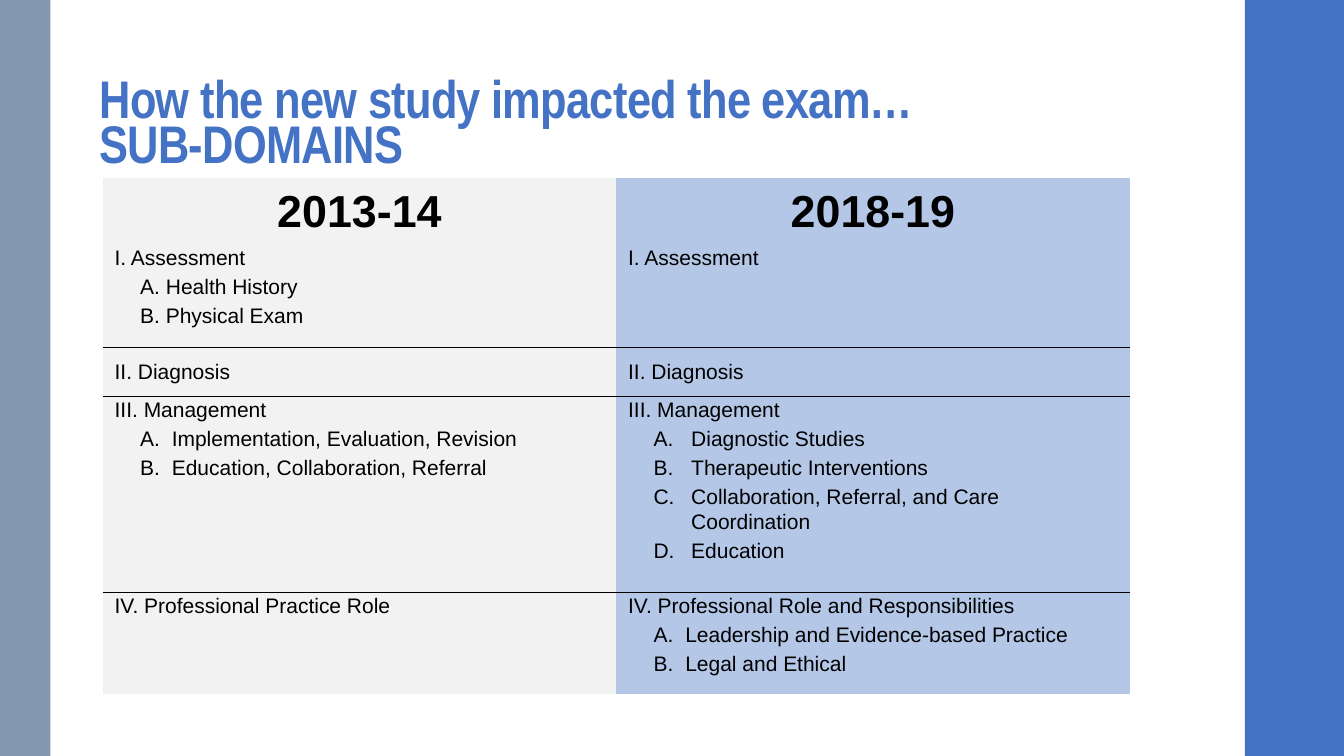
from lxml.etree import SubElement
from pptx import Presentation
from pptx.dml.color import RGBColor
from pptx.enum.shapes import MSO_SHAPE as Preset
from pptx.enum.text import MSO_ANCHOR as Anchor, PP_ALIGN as Align
from pptx.oxml import parse_xml
from pptx.oxml.ns import nsdecls, qn
from pptx.util import Cm, Pt

BLUE = RGBColor(0x44, 0x72, 0xC4)
SLATE = RGBColor(0x84, 0x97, 0xB0)
BLACK = RGBColor(0, 0, 0)
COLUMN_FILLS = [RGBColor(0xF2, 0xF2, 0xF2), RGBColor(0xB4, 0xC7, 0xE7)]
NO_STYLE = "{2D5ABB26-0587-4C30-8999-92F81FD0307C}"

SLIDE_WIDTH, SLIDE_HEIGHT = Cm(33.87), Cm(19.05)
YEARS = ["2013-14", "2018-19"]
ROW_HEIGHTS = [Cm(1.68), Cm(2.59), Cm(1.24), Cm(4.95), Cm(2.54)]
RULE_WIDTHS = {1: 1, 2: 1.5, 3: 1}  # row above the rule: points

# Each cell: domain, sub-domains, distance from letter to wording
DOMAINS = [
    [("I. Assessment", ["Health History", "Physical Exam"], Cm(0.65)),
     ("I. Assessment", [], 0)],
    [("II. Diagnosis", [], 0),
     ("II. Diagnosis", [], 0)],
    [("III. Management",
      ["Implementation, Evaluation, Revision",
       "Education, Collaboration, Referral"], Cm(0.8)),
     ("III. Management",
      ["Diagnostic Studies", "Therapeutic Interventions",
       "Collaboration, Referral, and Care\vCoordination", "Education"],
      Cm(0.95))],
    [("IV. Professional Practice Role", [], 0),
     ("IV. Professional Role and Responsibilities",
      ["Leadership and Evidence-based Practice", "Legal and Ethical"],
      Cm(0.8))],
]


def style_font(paragraph, name, size, color, bold=False):
    for run in paragraph.runs:
        font = run.font
        font.name, font.size, font.bold = name, Pt(size), bold
        font.color.rgb = color


def set_margins(target, left, top, right, bottom):
    target.margin_left, target.margin_top = left, top
    target.margin_right, target.margin_bottom = right, bottom


def add_side_band(slide, left, top, width, height, color):
    band = slide.shapes.add_shape(Preset.RECTANGLE, left, top, width, height)
    band.shadow.inherit = False
    band.fill.solid()
    band.fill.fore_color.rgb = color
    band.line.fill.background()


def add_title(slide, left, top, width, height):
    text_frame = slide.shapes.add_textbox(left, top, width, height).text_frame
    text_frame.word_wrap = True
    text_frame.vertical_anchor = Anchor.BOTTOM
    set_margins(text_frame, Cm(0.25), Cm(0.08), Cm(0.25), Cm(0.13))
    text_frame.text = "How the new study impacted the exam…\vSUB-DOMAINS"
    paragraph = text_frame.paragraphs[0]
    paragraph.line_spacing = 0.7
    style_font(paragraph, "Arial Narrow", 37.8, BLUE, bold=True)
    for run in paragraph.runs:
        run.font._element.set("spc", "-50")


def add_rule(cell, side, width):
    """Draw one cell border; borders come before the fill in the cell XML."""
    cell._tc.get_or_add_tcPr().insert(0, parse_xml(
        f'<a:{side} {nsdecls("a")} w="{Pt(width)}"><a:solidFill>'
        f'<a:srgbClr val="{BLACK}"/></a:solidFill></a:{side}>'))


def letter_paragraph(paragraph, gap):
    """Number a paragraph A., B., C. with a hanging indent."""
    properties = paragraph._p.get_or_add_pPr()
    properties.set("marL", str(Cm(0.64) + gap))
    properties.set("indent", str(-gap))
    SubElement(properties, qn("a:buFont"), typeface="+mj-lt")
    SubElement(properties, qn("a:buAutoNum"), type="alphaUcPeriod")


def fill_year_cell(cell, year):
    set_margins(cell, Cm(0.03), Cm(0.03), Cm(0.03), 0)
    cell.vertical_anchor = Anchor.MIDDLE
    cell.text_frame.text = year
    paragraph = cell.text_frame.paragraphs[0]
    paragraph.alignment = Align.CENTER
    style_font(paragraph, "Arial", 32, BLACK, bold=True)


def fill_domain_cell(cell, domain, subdomains, gap):
    set_margins(cell, Cm(0.3), 0, Cm(0.3), 0)
    cell.text_frame.text = "\n".join([domain, *subdomains])
    for index, paragraph in enumerate(cell.text_frame.paragraphs):
        paragraph.line_spacing = 1.07
        paragraph.space_before, paragraph.space_after = Pt(2), Pt(1)
        style_font(paragraph, "Arial", 15, BLACK)
        if index:
            letter_paragraph(paragraph, gap)


def add_domain_table(slide, left, top, width):
    frame = slide.shapes.add_table(len(ROW_HEIGHTS), len(YEARS), left, top,
                                   width, sum(ROW_HEIGHTS))
    table = frame.table
    table.first_row = table.horz_banding = False
    table._tbl.tblPr.find(qn("a:tableStyleId")).text = NO_STYLE
    for row, height in zip(table.rows, ROW_HEIGHTS):
        row.height = height

    for column, year in enumerate(YEARS):
        fill_year_cell(table.cell(0, column), year)
        for row, domains in enumerate(DOMAINS, start=1):
            fill_domain_cell(table.cell(row, column), *domains[column])
        table.cell(2, column).vertical_anchor = Anchor.MIDDLE

        # Column colour, then the rules between domains
        for row in range(len(ROW_HEIGHTS)):
            cell = table.cell(row, column)
            cell.fill.solid()
            cell.fill.fore_color.rgb = COLUMN_FILLS[column]
            if row in RULE_WIDTHS:
                add_rule(cell, "lnB", RULE_WIDTHS[row])
            if row - 1 in RULE_WIDTHS:
                add_rule(cell, "lnT", RULE_WIDTHS[row - 1])


def main():
    presentation = Presentation()
    presentation.slide_width = SLIDE_WIDTH
    presentation.slide_height = SLIDE_HEIGHT
    slide = presentation.slides.add_slide(presentation.slide_layouts[6])

    right_width = Cm(2.5)
    add_side_band(slide, SLIDE_WIDTH - right_width, 0, right_width,
                  SLIDE_HEIGHT, BLUE)
    add_side_band(slide, 0, 0, Cm(1.27), SLIDE_HEIGHT, SLATE)
    add_title(slide, Cm(2.26), Cm(1.78), Cm(29.36), Cm(2.69))
    add_domain_table(slide, Cm(2.59), Cm(4.48), Cm(25.88))
    presentation.save("out.pptx")


if __name__ == "__main__":
    main()
